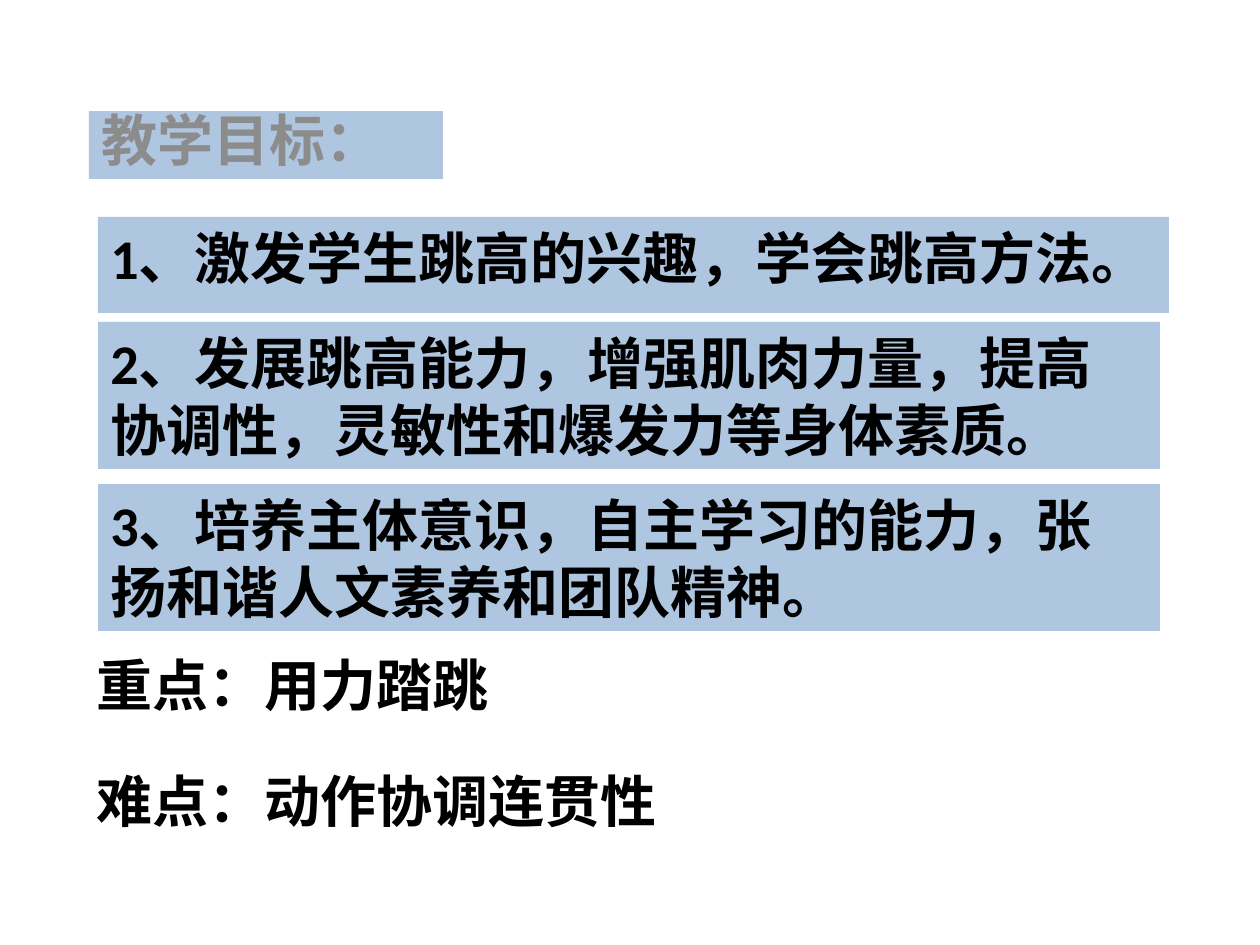
from dataclasses import dataclass

from lxml import etree
from pptx import Presentation
from pptx.dml.color import RGBColor
from pptx.enum.shapes import MSO_SHAPE
from pptx.enum.text import MSO_ANCHOR, PP_ALIGN
from pptx.oxml.ns import qn
from pptx.util import Emu, Pt

RECTANGLE = MSO_SHAPE.RECTANGLE
TOP, BOTTOM = MSO_ANCHOR.TOP, MSO_ANCHOR.BOTTOM
LEFT = PP_ALIGN.LEFT
EMU_PER_PX = 914400 / 126


@dataclass(frozen=True)
class Theme:
    font: str = "Calibri"
    size: int = 32
    panel: str = "4F81BD"
    panel_opacity: int = 45
    heading: str = "8C8C8C"
    text: str = "000000"


THEME = Theme()

HEADING = ("教学目标：", (89, 111, 354, 68))
GOALS = [
    ("1、激发学生跳高的兴趣，学会跳高方法。", (98, 217, 1071, 96)),
    ("2、发展跳高能力，增强肌肉力量，提高协调性，灵敏性和爆发力等身体素质。", (98, 322, 1062, 147)),
    ("3、培养主体意识，自主学习的能力，张扬和谐人文素养和团队精神。", (98, 484, 1062, 147)),
]
KEY_POINTS = [
    ("重点：用力踏跳", (84, 644, 595, 79)),
    ("难点：动作协调连贯性", (84, 760, 784, 79)),
]


def px(length):
    return Emu(round(length * EMU_PER_PX))


def write_text(shape, text, color, anchor=TOP):
    frame = shape.text_frame
    frame.word_wrap = True
    frame.vertical_anchor = anchor
    paragraph = frame.paragraphs[0]
    paragraph.alignment = LEFT
    run = paragraph.add_run()
    run.text = text
    run.font.name = THEME.font
    run.font.size = Pt(THEME.size)
    run.font.bold = True
    run.font.color.rgb = RGBColor.from_string(color)


def add_panel(slide, text, box, color=THEME.text, anchor=TOP):
    """Add a translucent rectangle that carries one paragraph."""
    panel = slide.shapes.add_shape(RECTANGLE, *map(px, box))
    panel.shadow.inherit = False
    panel.line.fill.background()
    panel.fill.solid()
    panel.fill.fore_color.rgb = RGBColor.from_string(THEME.panel)
    fill_color = panel._element.spPr.find(qn("a:solidFill"))[0]
    alpha = etree.SubElement(fill_color, qn("a:alpha"))
    alpha.set("val", str(THEME.panel_opacity * 1000))
    write_text(panel, text, color, anchor)


def add_key_point(slide, text, box):
    write_text(slide.shapes.add_textbox(*map(px, box)), text, THEME.text)


def main():
    presentation = Presentation()
    presentation.slide_width, presentation.slide_height = px(1260), px(945)
    slide = presentation.slides.add_slide(presentation.slide_layouts[6])

    add_panel(slide, *HEADING, color=THEME.heading, anchor=BOTTOM)
    for text, box in GOALS:
        add_panel(slide, text, box)
    for text, box in KEY_POINTS:
        add_key_point(slide, text, box)

    presentation.save("out.pptx")


if __name__ == "__main__":
    main()
